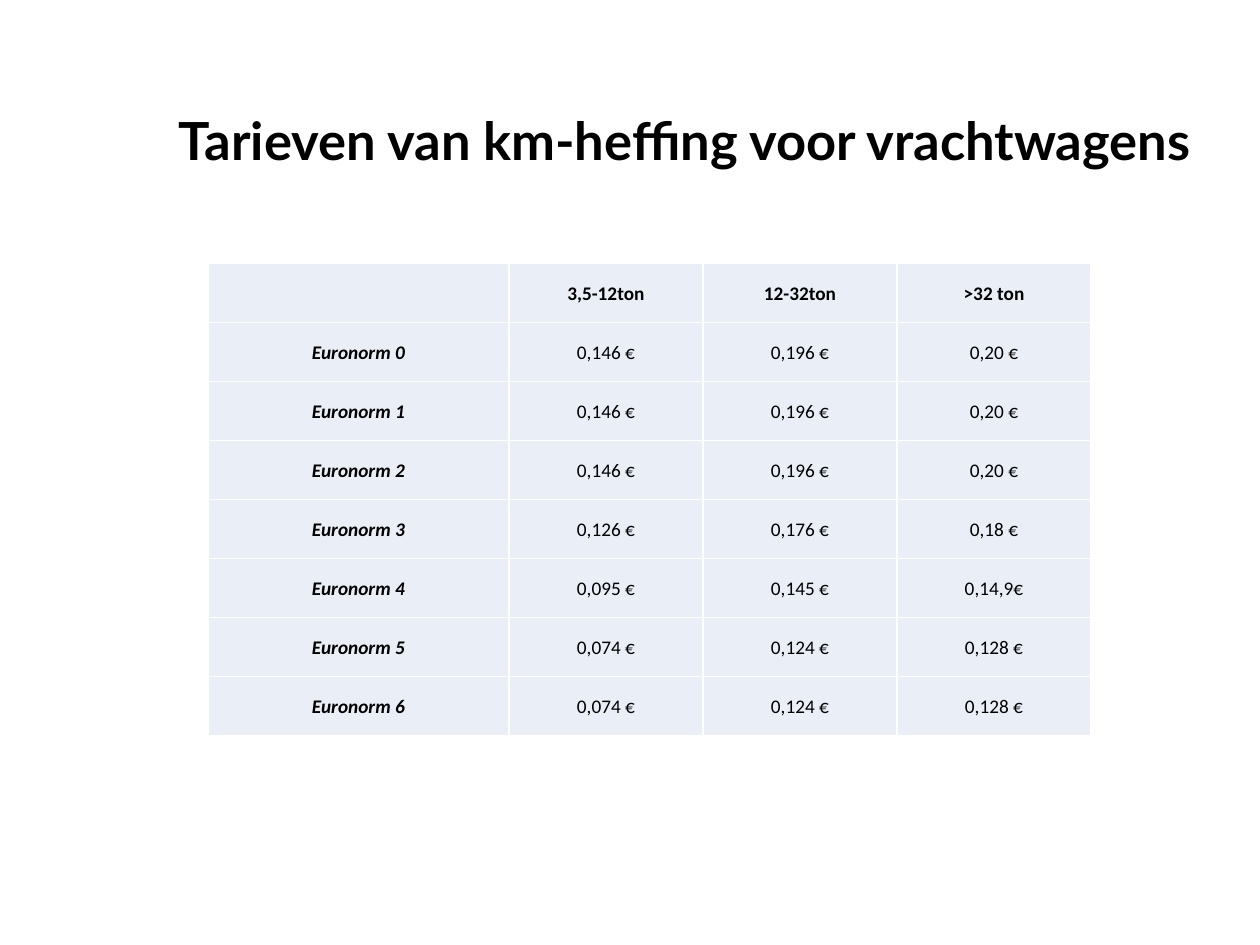
from pptx import Presentation
from pptx.dml.color import RGBColor
from pptx.enum.text import MSO_ANCHOR, PP_ALIGN
from pptx.oxml import parse_xml
from pptx.oxml.ns import nsdecls
from pptx.util import Inches, Pt


def color(code):
    return RGBColor.from_string(code)


def write(frame, text, font="Calibri", size=11, bold=False, italic=False,
          ink="000000", align=PP_ALIGN.LEFT, space=None):
    para = frame.paragraphs[0]
    para.alignment = align
    para.line_spacing = space
    run = para.add_run()
    run.text = text
    face = run.font
    face.name, face.size = font, Pt(size)
    face.bold, face.italic = bold, italic
    face.color.rgb = color(ink)


class Deck:
    """Holds the style and the current slide."""

    fill = "EAEFF7"
    line = "FFFFFF"

    def __init__(self):
        self.file = Presentation()
        self.file.slide_width = Inches(10)
        self.file.slide_height = Inches(7.5)
        self.slide = self.file.slides.add_slide(self.file.slide_layouts[6])

    def title(self, text, left, top, width, height):
        box = self.slide.shapes.add_textbox(
            Inches(left), Inches(top), Inches(width), Inches(height))
        frame = box.text_frame
        frame.word_wrap = True
        frame.margin_left = frame.margin_right = 0
        frame.margin_top = frame.margin_bottom = 0
        write(frame, text, font="Lato", size=30, bold=True, space=Pt(38))

    def border(self, cell):
        props = cell._tc.get_or_add_tcPr()
        for spot, side in enumerate("LRTB"):
            props.insert(spot, parse_xml(
                f'<a:ln{side} {nsdecls("a")} w="{Pt(1)}"><a:solidFill>'
                f'<a:srgbClr val="{self.line}"/></a:solidFill></a:ln{side}>'))

    def table(self, rows, widths, left, top, height):
        grid = self.slide.shapes.add_table(
            len(rows), len(widths), Inches(left), Inches(top),
            Inches(sum(widths)), Inches(height)).table
        for col, width in zip(grid.columns, widths):
            col.width = Inches(width)
        for r, row in enumerate(rows):
            for c, text in enumerate(row):
                cell = grid.cell(r, c)
                cell.fill.solid()
                cell.fill.fore_color.rgb = color(self.fill)
                self.border(cell)
                cell.vertical_anchor = MSO_ANCHOR.MIDDLE
                cell.margin_left = cell.margin_right = Inches(0.01)
                cell.margin_top, cell.margin_bottom = Inches(0.01), 0
                if text:
                    write(cell.text_frame, text, bold=r == 0 or c == 0,
                          italic=c == 0, align=PP_ALIGN.CENTER)


def main():
    rates = [
        ("0,146 €", "0,196 €", "0,20 €"),
        ("0,146 €", "0,196 €", "0,20 €"),
        ("0,146 €", "0,196 €", "0,20 €"),
        ("0,126 €", "0,176 €", "0,18 €"),
        ("0,095 €", "0,145 €", "0,14,9€"),
        ("0,074 €", "0,124 €", "0,128 €"),
        ("0,074 €", "0,124 €", "0,128 €"),
    ]
    rows = [("", "3,5-12ton", "12-32ton", ">32 ton")]
    rows += [(f"Euronorm {n}", *rate) for n, rate in enumerate(rates)]
    deck = Deck()
    deck.title("Tarieven van km-heffing voor vrachtwagens",
               1.42, 0.83, 8.11, 1.22)
    deck.table(rows, [2.39] + [1.54] * 3, 1.65, 2.09, 3.75)
    deck.file.save("out.pptx")


if __name__ == "__main__":
    main()
